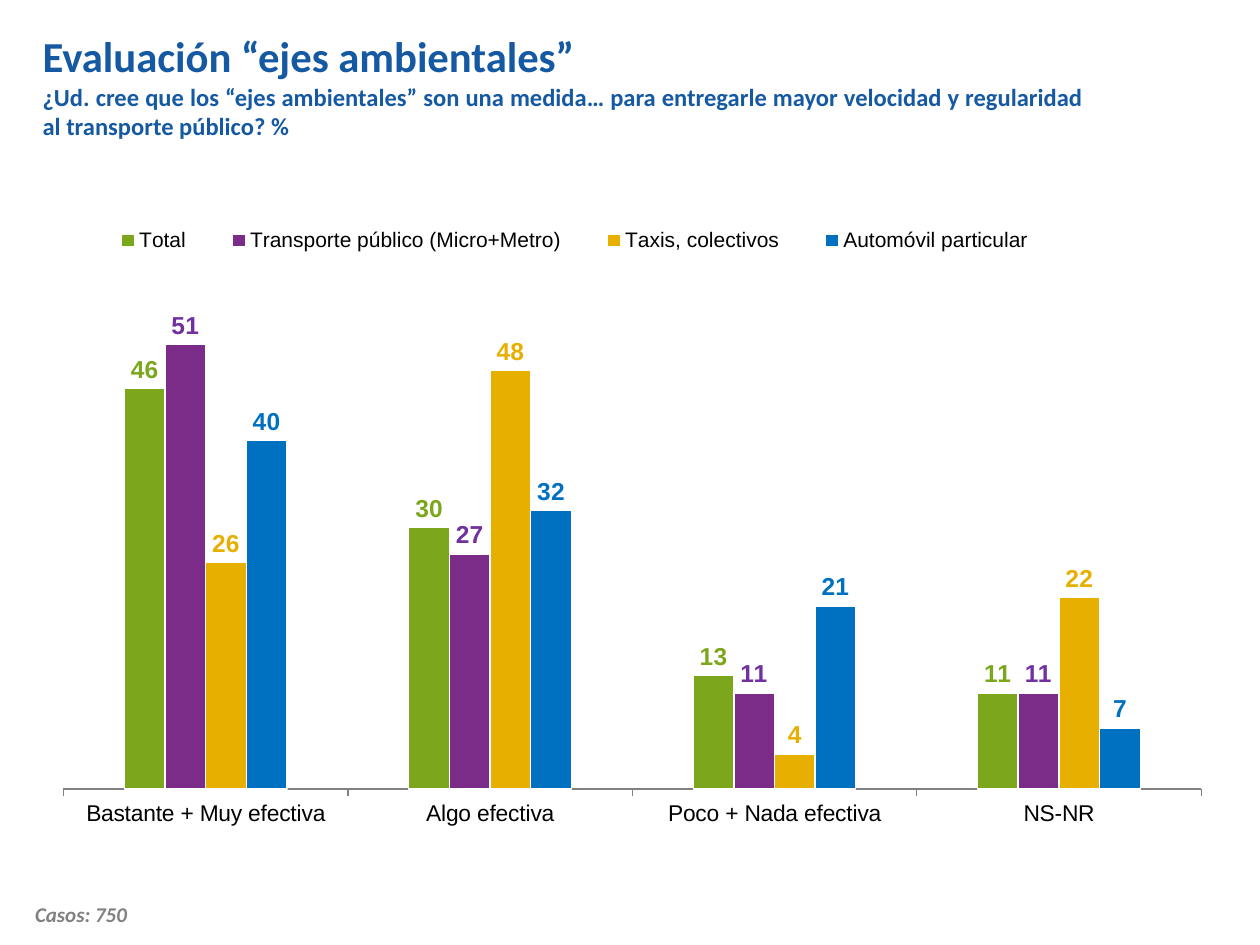
from dataclasses import dataclass
from lxml.etree import SubElement as Sub, Element as Elem
from pptx import Presentation
from pptx.chart.data import CategoryChartData as Data
from pptx.dml.color import RGBColor as RGB
from pptx.enum.chart import (XL_CHART_TYPE as Kind, XL_LABEL_POSITION as Spot,
                             XL_LEGEND_POSITION as Side, XL_TICK_MARK as Tick,
                             XL_TICK_LABEL_POSITION as Place)
from pptx.enum.text import (MSO_ANCHOR as Anchor, MSO_AUTO_SIZE as Auto,
                            PP_ALIGN as Align)
from pptx.oxml.ns import qn
from pptx.util import Inches, Pt

WIDE, HIGH = 10, 7.5
BLUE, GREY = "1559A2", "808080"


@dataclass
class Note:
    text: str
    box: tuple  # left, top, width, height as shares of the slide
    size: float
    hue: str
    slant: bool = False
    wrap: bool = True
    anchor: Anchor = Anchor.TOP
    align: Align = Align.LEFT
    fit: Auto = Auto.SHAPE_TO_FIT_TEXT


@dataclass
class Group:
    name: str
    vals: tuple
    fill: str
    ink: str
    edge: float = 0.75


NOTES = [
    Note("Casos: 750", (0.018, 0.947, 0.109, 0.04), 12, GREY,
         slant=True, wrap=False),
    Note("Evaluación “ejes ambientales”", (0.024, 0.016, 0.921, 0.085), 24.4,
         BLUE, anchor=Anchor.MIDDLE, fit=Auto.NONE),
    Note("¿Ud. cree que los “ejes ambientales” son una medida… para entregarle "
         "mayor velocidad y regularidad al transporte público? %",
         (0.024, 0.08, 0.846, 0.076), 14, BLUE, align=Align.JUSTIFY),
]
CATS = ["Bastante + Muy efectiva", "Algo efectiva", "Poco + Nada efectiva",
        "NS-NR"]
GROUPS = [
    Group("Total", (46, 30, 13, 11), "7CA71D", "7CA71D"),
    Group("Transporte público (Micro+Metro)", (51, 27, 11, 11), "7B2C88",
          "7030A0", 1),
    Group("Taxis, colectivos", (26, 48, 4, 22), "E7AF00", "E7AF00"),
    Group("Automóvil particular", (40, 32, 21, 7), "0070C0", "0070C0"),
]
FRAME = (0.028, 0.2, 0.931, 0.73)


def color(code: str) -> RGB:
    return RGB.from_string(code)


def apply(item, **vals) -> None:
    for key, val in vals.items():
        setattr(item, key, val)


def style(font, size: float, hue: str, name: str = "Arial", **more) -> None:
    apply(font, size=Pt(size), name=name, **more)
    font.color.rgb = color(hue)


def place(box: tuple) -> list:
    return [Inches(part * side) for part, side in zip(box, (WIDE, HIGH) * 2)]


def write(slide, note: Note) -> None:
    frame = slide.shapes.add_textbox(*place(note.box)).text_frame
    apply(frame, word_wrap=note.wrap, auto_size=note.fit,
          vertical_anchor=note.anchor)
    para = frame.paragraphs[0]
    para.alignment = note.align
    run = para.add_run()
    run.text = note.text
    style(run.font, note.size, note.hue, "Calibri", bold=True,
          italic=note.slant)


def pin(node, index: int, box: tuple, inner: bool = False) -> None:
    """Fix a chart part at shares of the chart's size."""
    for old in node.findall(qn("c:layout")):
        node.remove(old)
    layout = Elem(qn("c:layout"))
    node.insert(index, layout)
    manual = Sub(layout, qn("c:manualLayout"))
    rules = [("layoutTarget", "inner")] if inner else []
    rules += [("xMode", "edge"), ("yMode", "edge"), *zip("xywh", box)]
    for tag, val in rules:
        Sub(manual, qn(f"c:{tag}")).set("val", str(val))


def paint(series, group: Group) -> None:
    series.format.fill.solid()
    series.format.fill.fore_color.rgb = color(group.fill)
    line = series.format.line
    line.color.rgb = color("FFFFFF")
    line.width = Pt(group.edge)
    labels = series.data_labels
    apply(labels, show_value=True, position=Spot.OUTSIDE_END,
          number_format="0", number_format_is_linked=False)
    style(labels.font, 14, group.ink, bold=True)


def plot(slide) -> None:
    data = Data(number_format="0")
    data.categories = CATS
    for group in GROUPS:
        data.add_series(group.name, group.vals)
    chart = slide.shapes.add_chart(Kind.COLUMN_CLUSTERED, *place(FRAME),
                                   data).chart
    apply(chart, has_title=False, has_legend=True)
    style(chart.font, 12, "000000", "Calibri")

    # Bars
    bars = chart.plots[0]
    apply(bars, gap_width=300, overlap=0, vary_by_categories=False)
    for series, group in zip(bars.series, GROUPS):
        paint(series, group)

    # Axes
    apply(chart.value_axis, minimum_scale=0, maximum_scale=60, visible=False,
          has_major_gridlines=False)
    axis = chart.category_axis
    apply(axis, major_tick_mark=Tick.OUTSIDE, tick_label_position=Place.LOW)
    axis.format.line.color.rgb = color(GREY)
    style(axis.tick_labels.font, 13, "000000")

    # Legend and plot area
    key = chart.legend
    apply(key, position=Side.TOP, include_in_layout=False)
    style(key.font, 12, "000000")
    pin(key._element, 1, (0.04, 0.04, 0.84, 0.07))
    area = chart._chartSpace.chart.plotArea
    pin(area, 0, (0.024, 0.112, 0.97, 0.758), inner=True)


def main() -> None:
    deck = Presentation()
    apply(deck, slide_width=Inches(WIDE), slide_height=Inches(HIGH))
    slide = deck.slides.add_slide(deck.slide_layouts[6])
    plot(slide)
    for note in NOTES:
        write(slide, note)
    deck.save("out.pptx")


if __name__ == "__main__":
    main()
